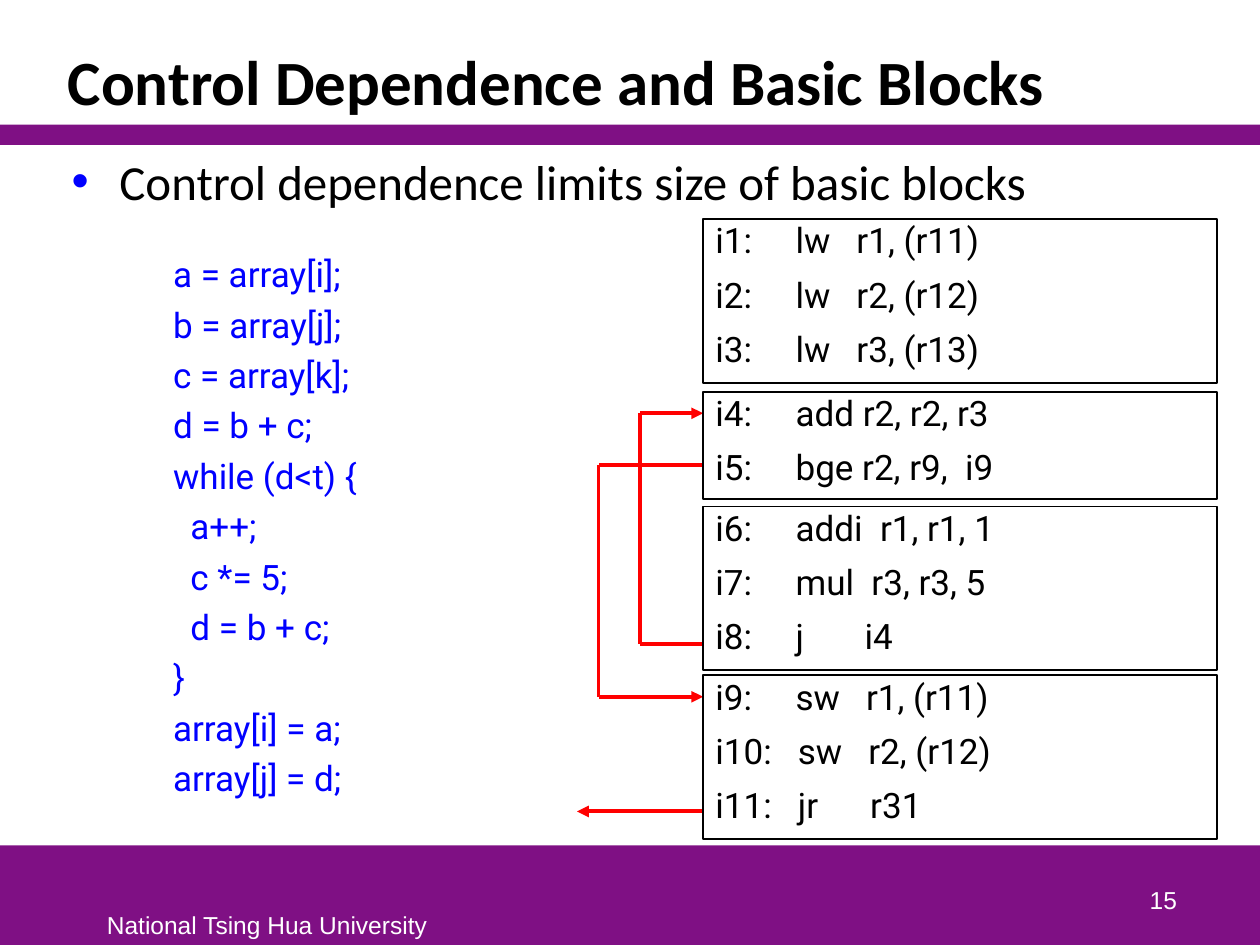
from dataclasses import dataclass

from lxml.etree import SubElement
from pptx import Presentation
from pptx.dml.color import RGBColor
from pptx.enum.shapes import MSO_CONNECTOR, MSO_SHAPE
from pptx.enum.text import MSO_ANCHOR, PP_ALIGN
from pptx.oxml.ns import qn
from pptx.util import Inches, Pt

PURPLE, BLUE, RED = "7F1084", "0000FF", "FF0000"
BLACK, WHITE = "000000", "FFFFFF"


@dataclass
class Style:
    font: str
    size: float
    color: str
    bold: bool = False
    line_spacing: float = 1.0
    space_before: float = 0
    align: PP_ALIGN = PP_ALIGN.LEFT
    anchor: MSO_ANCHOR = MSO_ANCHOR.TOP
    wrap: bool = True


@dataclass
class BasicBlock:
    top: float
    height: float
    instructions: list[str]


@dataclass
class Jump:
    points: list[tuple[float, float]]


def rgb(color: str) -> RGBColor:
    return RGBColor.from_string(color)


def write(shape, text: str, style: Style) -> None:
    frame = shape.text_frame
    frame.text = text
    frame.word_wrap = style.wrap
    frame.vertical_anchor = style.anchor
    for index, paragraph in enumerate(frame.paragraphs):
        paragraph.alignment = style.align
        paragraph.line_spacing = style.line_spacing
        paragraph.space_before = Pt(style.space_before if index else 0)
        for run in paragraph.runs:
            run.font.name = style.font
            run.font.size = Pt(style.size)
            run.font.bold = style.bold
            run.font.color.rgb = rgb(style.color)


def add_text(slide, left: float, top: float, width: float, height: float,
             text: str, style: Style):
    box = slide.shapes.add_textbox(Inches(left), Inches(top), Inches(width), Inches(height))
    write(box, text, style)
    return box


def add_rectangle(slide, left: float, top: float, width: float, height: float,
                  fill: str = "", line: str = ""):
    rectangle = slide.shapes.add_shape(
        MSO_SHAPE.RECTANGLE, Inches(left), Inches(top), Inches(width), Inches(height))
    rectangle.shadow.inherit = False
    if fill:
        rectangle.fill.solid()
        rectangle.fill.fore_color.rgb = rgb(fill)
    else:
        rectangle.fill.background()
    if line:
        rectangle.line.color.rgb = rgb(line)
        rectangle.line.width = Pt(1)
    else:
        rectangle.line.fill.background()
    return rectangle


def add_bullet(paragraph, color: str, indent: float) -> None:
    properties = paragraph._p.get_or_add_pPr()
    properties.set("marL", str(Inches(indent)))
    properties.set("indent", str(-Inches(indent)))
    bullet_color = SubElement(properties, qn("a:buClr"))
    SubElement(bullet_color, qn("a:srgbClr")).set("val", color)
    SubElement(properties, qn("a:buFont")).set("typeface", "Arial")
    SubElement(properties, qn("a:buChar")).set("char", "•")


def draw_jump(slide, jump: Jump) -> None:
    segments = list(zip(jump.points, jump.points[1:]))
    for start, end in segments:
        segment = slide.shapes.add_connector(
            MSO_CONNECTOR.STRAIGHT, *(Inches(value) for value in start + end))
        segment.line.color.rgb = rgb(RED)
        segment.line.width = Pt(2.25)
        SubElement(segment._element.spPr, qn("a:effectLst"))
    # The arrowhead sits on the last segment
    SubElement(segment.line._get_or_add_ln(), qn("a:tailEnd")).set("type", "triangle")


BLOCK_LEFT, BLOCK_WIDTH = 5.58, 4.08
BLOCKS = [
    BasicBlock(1.74, 1.3, ["i1:     lw   r1, (r11)", "i2:     lw   r2, (r12)",
                           "i3:     lw   r3, (r13)"]),
    BasicBlock(3.11, 0.85, ["i4:     add r2, r2, r3", "i5:     bge r2, r9,  i9"]),
    BasicBlock(4.02, 1.3, ["i6:     addi  r1, r1, 1", "i7:     mul  r3, r3, 5",
                           "i8:     j       i4"]),
    BasicBlock(5.36, 1.3, ["i9:     sw   r1, (r11)", "i10:   sw   r2, (r12)",
                           "i11:   jr      r31"]),
]


def detour(lane: float, start: float, end: float) -> Jump:
    """Leave the blocks, follow a vertical lane and come back."""
    return Jump([(BLOCK_LEFT, start), (lane, start), (lane, end), (BLOCK_LEFT, end)])


JUMPS = [
    detour(4.75, 3.69, 5.53),  # i5 to i9
    detour(5.08, 5.11, 3.28),  # i8 to i4
    Jump([(BLOCK_LEFT, 6.44), (4.58, 6.44)]),  # i11 returns
]

SOURCE_CODE = """\
    a = array[i];
    b = array[j];
    c = array[k];
    d = b + c;
    while (d<t) {
      a++;
      c *= 5;
      d = b + c;
    }
    array[i] = a;
    array[j] = d;"""


def main() -> None:
    presentation = Presentation()
    presentation.slide_width, presentation.slide_height = Inches(10), Inches(7.5)
    slide = presentation.slides.add_slide(presentation.slide_layouts[6])

    # Bands and footer
    add_rectangle(slide, 0, 6.71, 10, 0.79, fill=PURPLE)
    add_rectangle(slide, 0, 0.99, 10, 0.16, fill=PURPLE)
    add_text(slide, 0.75, 7.17, 2.76, 0.33, "National Tsing Hua University",
             Style("Arial", 14, WHITE, wrap=False))

    # Title and main point
    add_text(slide, 0.44, 0.25, 8.97, 0.74, "Control Dependence and Basic Blocks",
             Style("Calibri", 36, BLACK, bold=True, line_spacing=0.85,
                   anchor=MSO_ANCHOR.BOTTOM))
    point = add_text(slide, 0.47, 1.15, 8.94, 0.57,
                     "Control dependence limits size of basic blocks",
                     Style("Calibri", 28, BLACK))
    add_bullet(point.text_frame.paragraphs[0], BLUE, 0.38)

    # Source code
    code = add_rectangle(slide, 1, 1.89, 2.5, 4.51, line=WHITE)
    write(code, SOURCE_CODE, Style("Roboto", 20, BLUE, line_spacing=1.2))

    # Jumps between basic blocks
    for jump in JUMPS:
        draw_jump(slide, jump)

    # Basic blocks
    assembly = Style("Roboto", 20, BLACK, line_spacing=0.85, space_before=10.5)
    for block in BLOCKS:
        frame = add_rectangle(slide, BLOCK_LEFT, block.top, BLOCK_WIDTH, block.height,
                              line=BLACK)
        write(frame, "\n".join(block.instructions), assembly)

    # Page number
    add_text(slide, 7.36, 6.81, 2.08, 0.5, "15",
             Style("Arial", 14, WHITE, align=PP_ALIGN.RIGHT, anchor=MSO_ANCHOR.BOTTOM))

    presentation.save("out.pptx")


if __name__ == "__main__":
    main()
